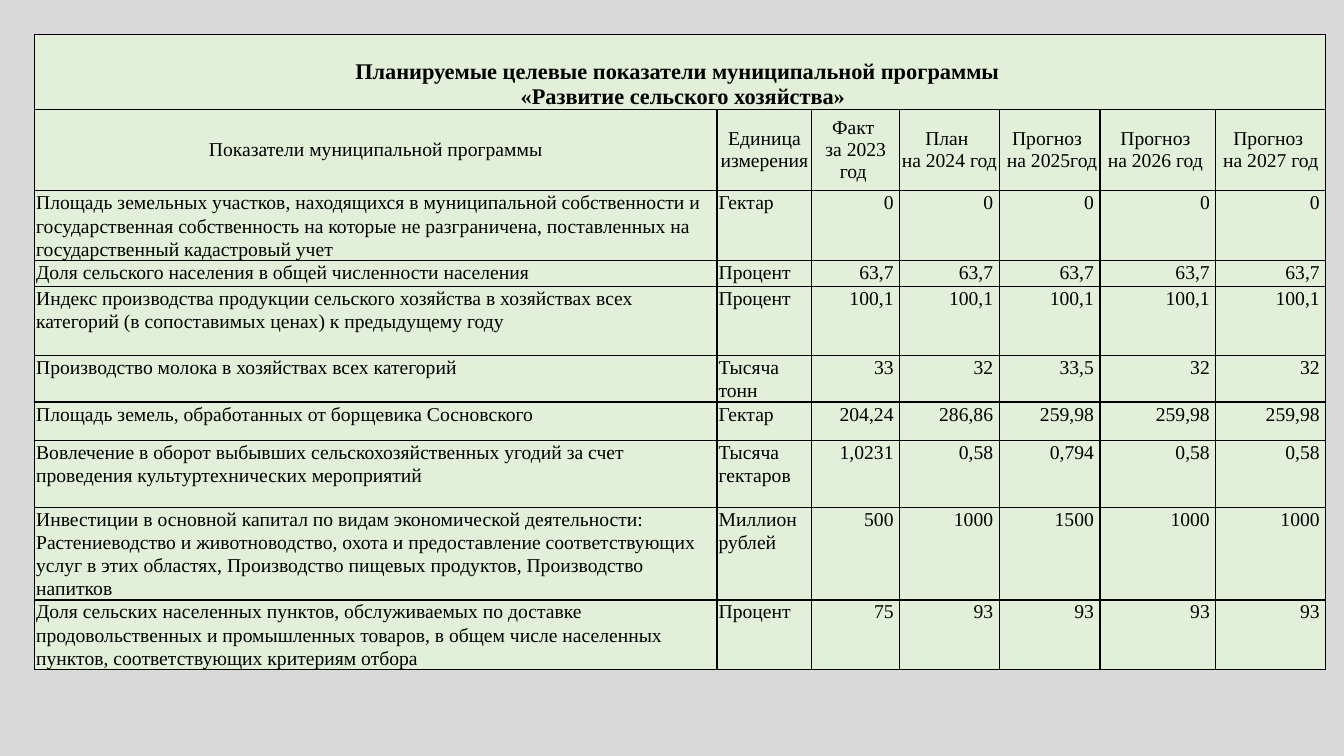
"""Build a slide with a table of target indicators for an agriculture programme."""
from lxml import etree
from pptx import Presentation
from pptx import util as u
from pptx.dml.color import RGBColor
from pptx.enum import text
from pptx.oxml.ns import qn

TITLE = "Планируемые целевые показатели муниципальной программы \n «Развитие сельского хозяйства»"
HEADER = ("Показатели муниципальной программы", "Единица измерения", "Факт \nза 2023 год ",
          "План \nна 2024 год ", "Прогноз \n на 2025год ", "Прогноз \nна 2026 год ",
          "Прогноз \n на 2027 год ")
INDICATORS = [
    ("Площадь земельных участков, находящихся в муниципальной собственности и "
     "государственная собственность на которые не разграничена, поставленных на "
     "государственный кадастровый учет", "Гектар", "0", "0", "0", "0", "0"),
    ("Доля сельского населения в общей численности населения", "Процент",
     "63,7", "63,7", "63,7", "63,7", "63,7"),
    ("Индекс производства продукции сельского хозяйства в хозяйствах всех "
     "категорий (в сопоставимых ценах) к предыдущему году", "Процент",
     "100,1", "100,1", "100,1", "100,1", "100,1"),
    ("Производство молока в хозяйствах всех категорий", "Тысяча тонн",
     "33", "32", "33,5", "32", "32"),
    ("Площадь земель, обработанных от борщевика Сосновского", "Гектар",
     "204,24", "286,86", "259,98", "259,98", "259,98"),
    ("Вовлечение в оборот выбывших сельскохозяйственных угодий за счет "
     "проведения культуртехнических мероприятий", "Тысяча гектаров",
     "1,0231", "0,58", "0,794", "0,58", "0,58"),
    ("Инвестиции в основной капитал по видам экономической деятельности: "
     "Растениеводство и животноводство, охота и предоставление соответствующих "
     "услуг в этих областях, Производство пищевых продуктов, Производство напитков",
     "Миллион рублей", "500", "1000", "1500", "1000", "1000"),
    ("Доля сельских населенных пунктов, обслуживаемых по доставке "
     "продовольственных и промышленных товаров, в общем числе населенных "
     "пунктов, соответствующих критериям отбора", "Процент",
     "75", "93", "93", "93", "93"),
]
COLS = (17.2, 2.39, 2.21, 2.51, 2.54, 2.92, 2.77)
ROWS = (1.88, 2.06, 1.75, 0.66, 1.74, 1.16, 0.96, 1.69, 2.33, 1.75)
LEFT, TOP = 0.87, 0.87
BACK, GREEN, BLACK = "D9D9D9", "E2F0D9", "000000"

A, P = text.MSO_ANCHOR, text.PP_ALIGN
FORMATS = {
    "title": dict(size=16, bold=True, align=P.CENTER, spacing=1.0, anchor=A.BOTTOM, ins=(0.02, 0.02)),
    "header": dict(size=14, bold=False, align=P.CENTER, spacing=1.0, anchor=A.MIDDLE, ins=(0.02, 0.02)),
    "label": dict(size=14, bold=False, align=P.LEFT, spacing=1.07, anchor=A.TOP, ins=(0.04, 0)),
    "value": dict(size=14, bold=False, align=P.RIGHT, spacing=1.07, anchor=A.TOP, ins=(0, 0.15)),
}


def paint(fill, color):
    fill.solid()
    fill.fore_color.rgb = RGBColor.from_string(color)


def add_borders(cell):
    tc_pr = cell._tc.get_or_add_tcPr()
    for side in ("lnL", "lnR", "lnT", "lnB"):
        ln = etree.SubElement(tc_pr, qn("a:" + side), w=str(u.Pt(1)))
        etree.SubElement(etree.SubElement(ln, qn("a:solidFill")), qn("a:srgbClr"), val=BLACK)


def write(cell, content, fmt):
    cell.text = content
    left, right = fmt["ins"]
    attrs = dict(margin_left=u.Cm(left), margin_right=u.Cm(right), margin_top=0,
                 margin_bottom=0, vertical_anchor=fmt["anchor"])
    for name, value in attrs.items():
        setattr(cell, name, value)
    for p in cell.text_frame.paragraphs:
        p.alignment, p.line_spacing = fmt["align"], fmt["spacing"]
        for r in p.runs:
            font = dict(name="Times New Roman", size=u.Pt(fmt["size"]), bold=fmt["bold"])
            for name, value in font.items():
                setattr(r.font, name, value)
            paint(r.font.fill, BLACK)


def kind(row, col):
    if row < 2:
        return ("title", "header")[row]
    return "label" if col < 2 else "value"


def main():
    prs = Presentation()
    prs.slide_width, prs.slide_height = u.Cm(33.87), u.Cm(19.05)
    s = prs.slides.add_slide(prs.slide_layouts[6])
    paint(s.background.fill, BACK)
    table = s.shapes.add_table(len(ROWS), len(COLS), u.Cm(LEFT), u.Cm(TOP),
                               u.Cm(sum(COLS)), u.Cm(sum(ROWS))).table
    table.first_row = table.horz_banding = False
    for column, width in zip(table.columns, COLS):
        column.width = u.Cm(width)
    for row, height in zip(table.rows, ROWS):
        row.height = u.Cm(height)
    table.cell(0, 0).merge(table.cell(0, len(COLS) - 1))
    for cell in table.iter_cells():
        add_borders(cell)
        paint(cell.fill, GREEN)
    for i, contents in enumerate([(TITLE,), HEADER, *INDICATORS]):
        for j, content in enumerate(contents):
            write(table.cell(i, j), content, FORMATS[kind(i, j)])
    prs.save("out.pptx")


if __name__ == "__main__":
    main()
